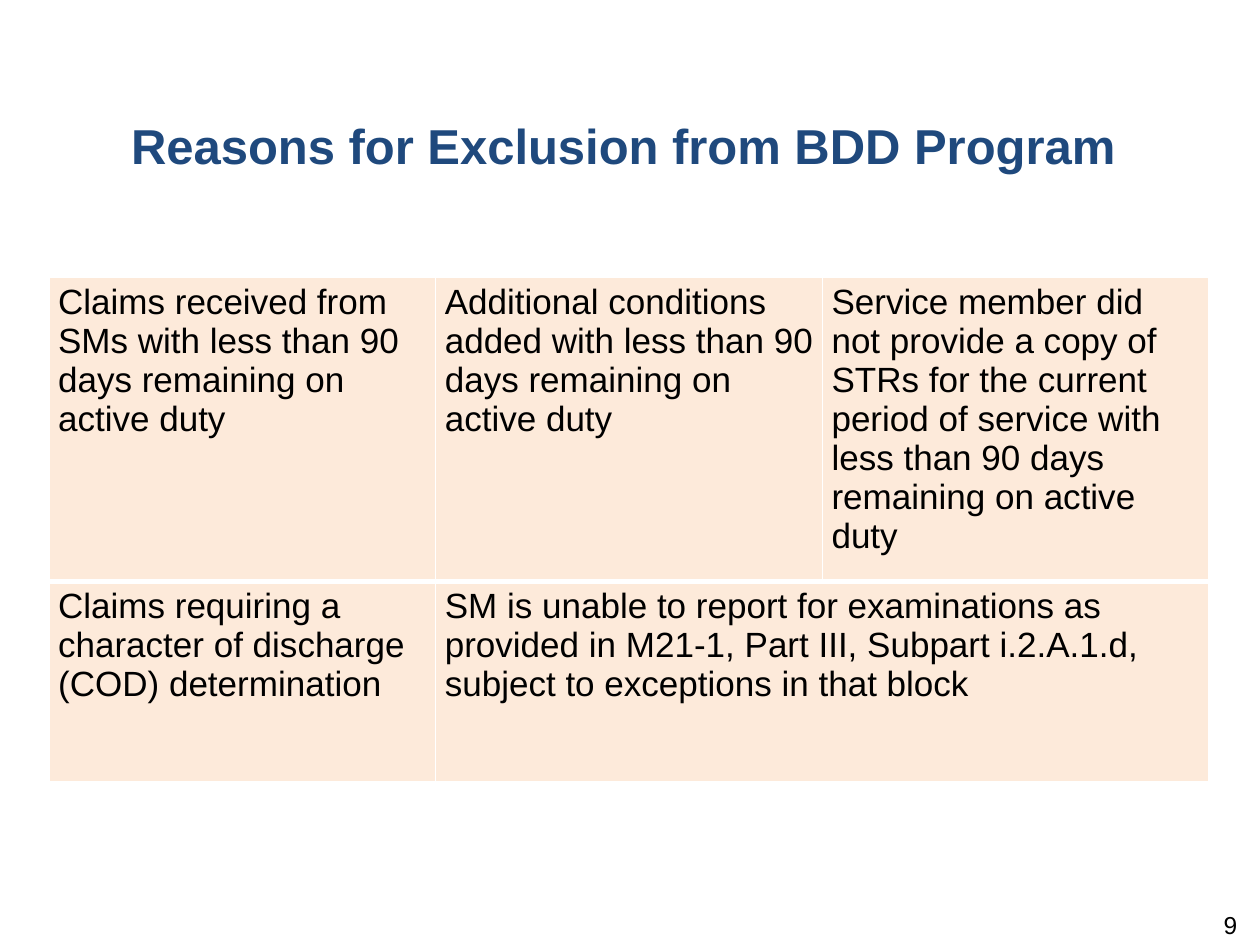
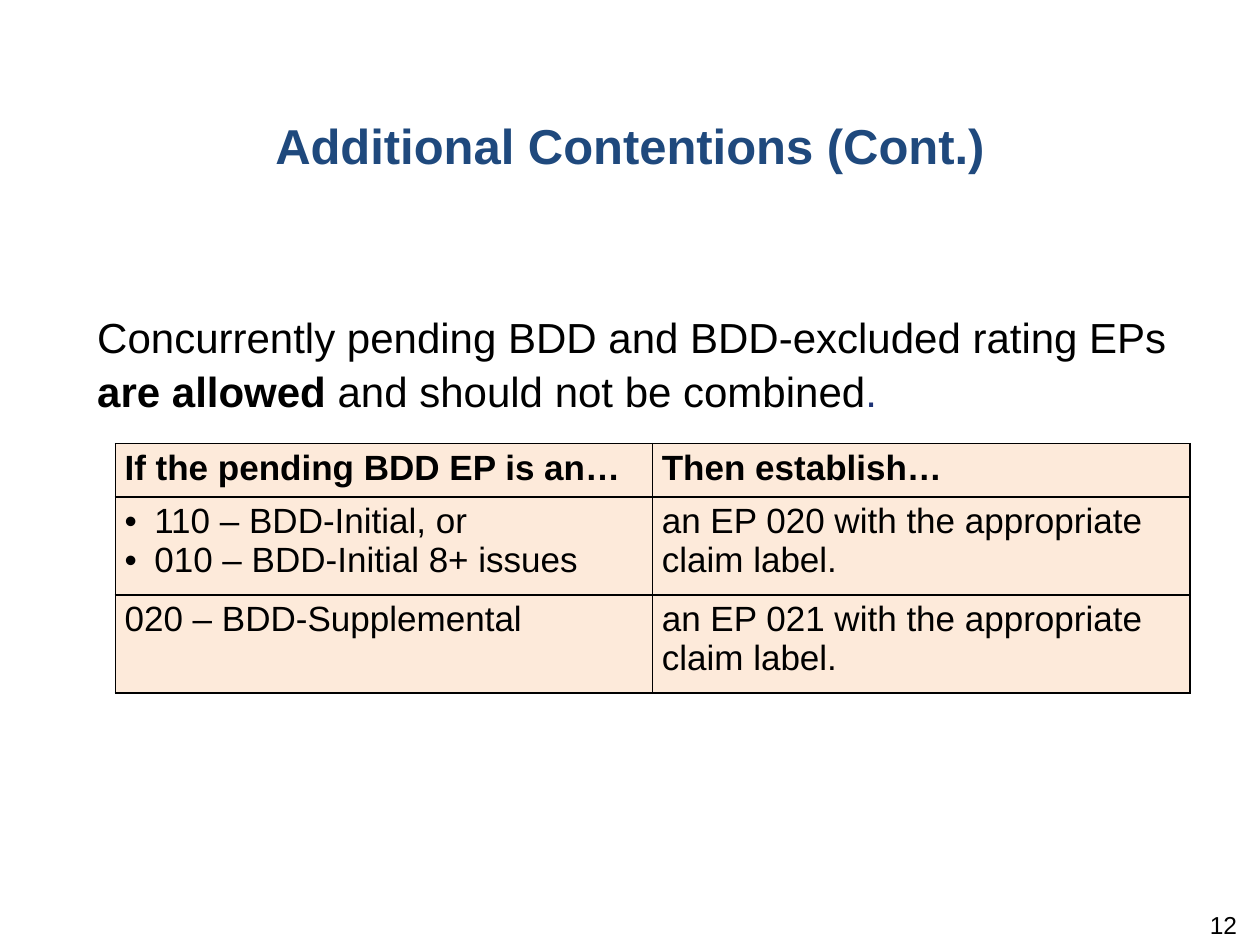
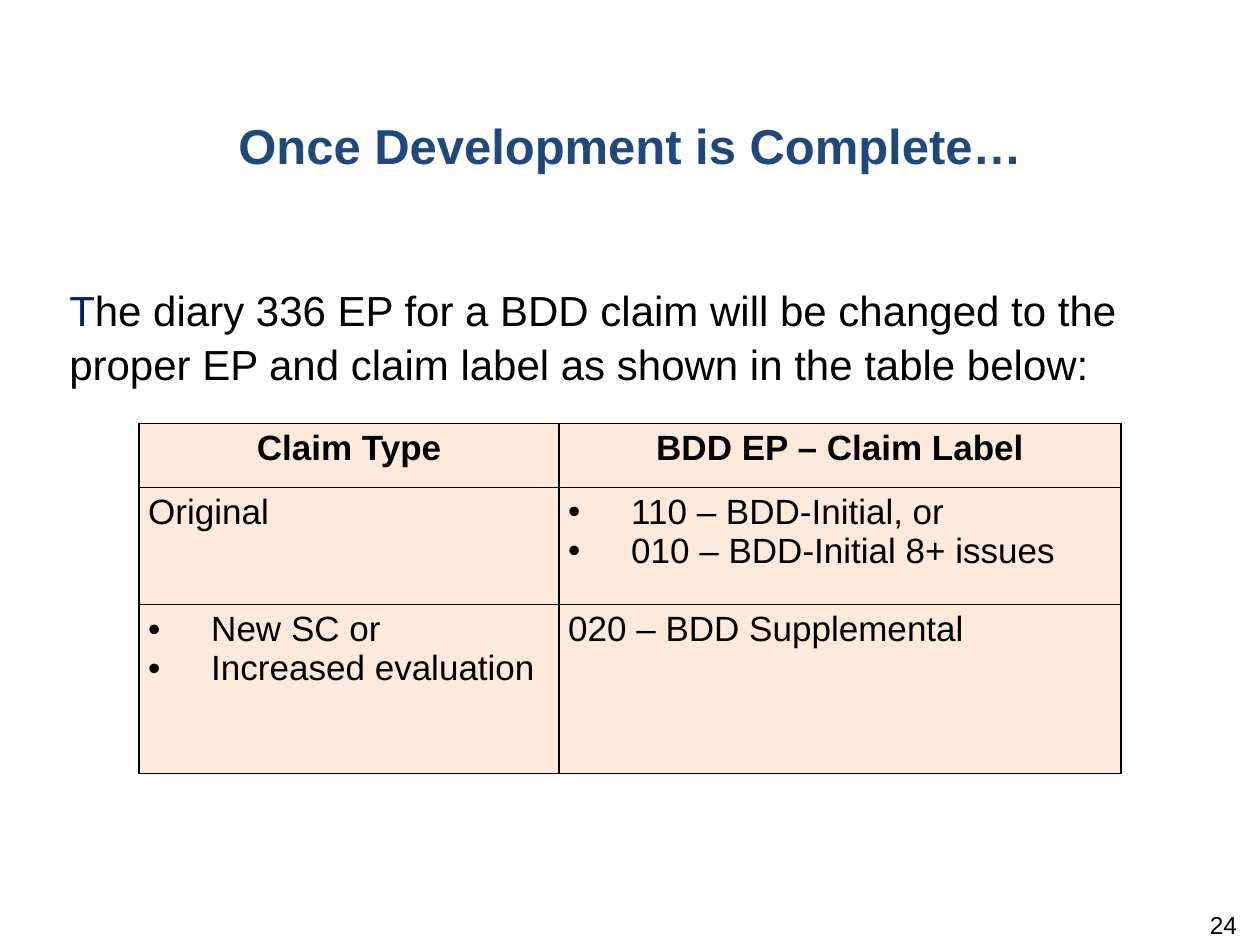
from lxml import etree
from pptx import Presentation
from pptx.dml.color import RGBColor
from pptx.enum import text as t
from pptx.oxml.ns import qn
from pptx.util import Pt

FONT = "Arial"
NAVY = RGBColor(0x1F, 0x49, 0x7D)
BLACK = RGBColor(0, 0, 0)
WHITE = RGBColor(0xFF, 0xFF, 0xFF)
PEACH = RGBColor(0xFD, 0xEA, 0xDA)
INDIGO = RGBColor(0x1D, 0x32, 0x75)
DEEP_BLUE = RGBColor(0x00, 0x20, 0x60)

# Content: a cell is a string, a list (bulleted) or None (merged into the cell on its left);
# an intro is a list of (text, bold, colour)
SLIDES = [
    dict(
        title="Reasons for Exclusion from BDD Program ",
        number=9,
        table=dict(
            at=(28, 158.5), columns=(221, 221, 221), rows=(161, 114.5),
            line=WHITE, inner_width=3, header=None,
            cells=[
                ["Claims received from SMs with less than 90 days remaining on active duty",
                 "Additional conditions added with less than 90 days remaining on active duty",
                 "Service member did not provide a copy of STRs for the current period of "
                 "service with less than 90 days remaining on active duty"],
                ["Claims requiring a character of discharge (COD) determination",
                 "SM is unable to report for examinations as provided in M21-1, Part III, "
                 "Subpart i.2.A.1.d, subject to exceptions in that block",
                 None],
            ]),
    ),
    dict(
        title="Additional Contentions (Cont.)",
        number=12,
        intro_box=(48.5, 172.5, 648, 252),
        intro=[("Concurrently pending BDD and BDD-excluded rating EPs ", False, BLACK),
               ("are allowed ", True, BLACK),
               ("and should not be combined", False, BLACK),
               (".", False, INDIGO)],
        table=dict(
            at=(66, 253.5), columns=(307, 307), rows=(30.5, 56, 56),
            line=BLACK, inner_width=1, header=t.PP_ALIGN.LEFT, indent=17,
            cells=[
                ["If the pending BDD EP is an…", "Then establish…"],
                [["110 – BDD-Initial, or", "010 – BDD-Initial 8+ issues"],
                 "an EP 020 with the appropriate claim label."],
                ["020 – BDD-Supplemental", "an EP 021 with the appropriate claim label."],
            ]),
    ),
    dict(
        title="Once Development is Complete…",
        number=24,
        intro_box=(32.5, 157, 664, 320),
        intro=[("T", False, DEEP_BLUE),
               ("he diary 336 EP for a BDD claim will be changed to the proper EP "
                "and claim label as shown in the table below:", False, BLACK)],
        table=dict(
            at=(79.5, 242), columns=(240, 321), rows=(36.5, 67, 96.5),
            line=BLACK, inner_width=1, header=t.PP_ALIGN.CENTER, indent=36,
            cells=[
                ["Claim Type", "BDD EP – Claim Label"],
                ["Original", ["110 – BDD-Initial, or", "010 – BDD-Initial 8+ issues"]],
                [["New SC or", "Increased evaluation"], "020 – BDD Supplemental"],
            ]),
    ),
]


def style(font, size, color, bold=False):
    font.name, font.size, font.bold = FONT, Pt(size), bold
    font.color.rgb = color


def add_text_box(slide, left, top, width, height):
    frame = slide.shapes.add_textbox(Pt(left), Pt(top), Pt(width), Pt(height)).text_frame
    frame.word_wrap = True
    return frame


def add_title(slide, wording):
    title = slide.shapes.title
    title.left, title.top, title.width, title.height = Pt(0), Pt(62.5), Pt(720), Pt(85)
    frame = title.text_frame
    frame.text = wording
    frame.auto_size = t.MSO_AUTO_SIZE.NONE
    frame.vertical_anchor = t.MSO_ANCHOR.TOP
    heading = frame.paragraphs[0]
    heading.alignment = t.PP_ALIGN.CENTER
    style(heading.runs[0].font, 28, NAVY, True)


def add_page_number(slide, number):
    frame = add_text_box(slide, 546, 520, 168, 29)
    frame.margin_top = 0
    frame.text = str(number)
    page = frame.paragraphs[0]
    page.alignment = t.PP_ALIGN.RIGHT
    style(page.runs[0].font, 14, BLACK)


def add_intro(slide, box, parts):
    sentence = add_text_box(slide, *box).paragraphs[0]
    sentence.line_spacing = 1.07
    for wording, bold, color in parts:
        run = sentence.add_run()
        run.text = wording
        style(run.font, 24, color, bold)


def add_bullet(paragraph, indent):
    props = paragraph._p.get_or_add_pPr()
    props.set("marL", str(Pt(indent)))
    props.set("indent", str(-Pt(indent)))
    etree.SubElement(props, qn("a:buFont")).set("typeface", FONT)
    etree.SubElement(props, qn("a:buChar")).set("char", "•")


def set_borders(cell, color, widths):
    """Draw the left, right, top and bottom lines; called before the cell is filled."""
    props = cell._tc.get_or_add_tcPr()
    for side, width in zip("LRTB", widths):
        line = etree.SubElement(props, qn(f"a:ln{side}"), w=str(Pt(width)))
        fill = etree.SubElement(line, qn("a:solidFill"))
        etree.SubElement(fill, qn("a:srgbClr"), val=str(color))


def fill_cell(cell, content, header, indent):
    cell.margin_left = cell.margin_right = Pt(5.2)
    cell.margin_top = cell.margin_bottom = Pt(2.9)
    bulleted = isinstance(content, list)
    cell.text_frame.text = "\n".join(content) if bulleted else content
    for paragraph in cell.text_frame.paragraphs:
        if bulleted:
            add_bullet(paragraph, indent)
        if header is not None:
            paragraph.alignment = header
        style(paragraph.runs[0].font, 20, BLACK, header is not None)


def add_grid(slide, at, columns, rows, line, inner_width, header, cells, indent=0):
    grid = slide.shapes.add_table(len(rows), len(columns), Pt(at[0]), Pt(at[1]),
                                  Pt(sum(columns)), Pt(sum(rows))).table
    grid.first_row = grid.horz_banding = False
    for column, width in zip(grid.columns, columns):
        column.width = Pt(width)
    for r, (height, contents) in enumerate(zip(rows, cells)):
        grid.rows[r].height = Pt(height)
        above = inner_width if r > 0 else 1
        below = inner_width if r < len(rows) - 1 else 1
        for c, content in enumerate(contents):
            cell = grid.cell(r, c)
            set_borders(cell, line, (1, 1, above, below))
            cell.fill.solid()
            cell.fill.fore_color.rgb = PEACH
            if content is None:
                grid.cell(r, c - 1).merge(cell)
            else:
                fill_cell(cell, content, header if r == 0 else None, indent)


def main():
    deck = Presentation()
    deck.slide_width, deck.slide_height = Pt(720), Pt(540)
    title_only = deck.slide_layouts[5]
    for content in SLIDES:
        slide = deck.slides.add_slide(title_only)
        add_title(slide, content["title"])
        if "intro" in content:
            add_intro(slide, content["intro_box"], content["intro"])
        add_page_number(slide, content["number"])
        add_grid(slide, **content["table"])
    deck.save("out.pptx")


if __name__ == "__main__":
    main()
